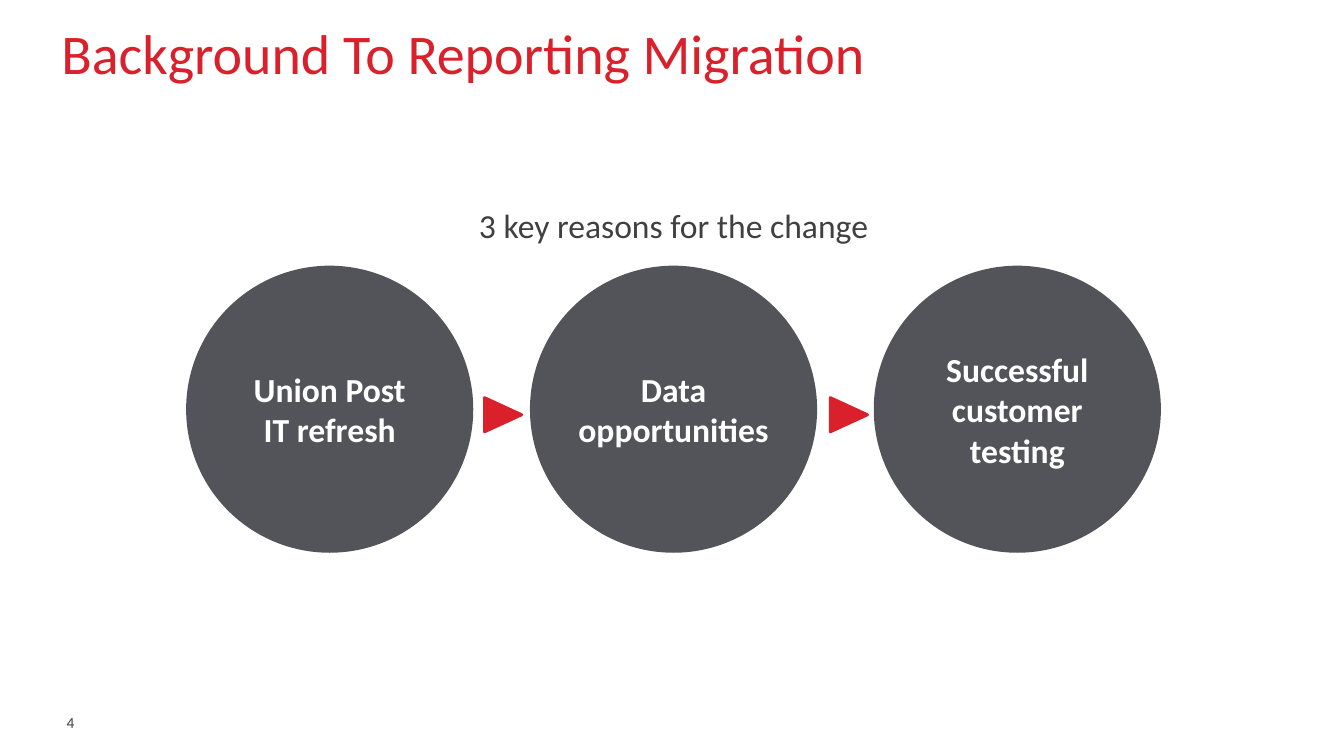
from pptx import Presentation
from pptx.dml.color import RGBColor
from pptx.enum.shapes import MSO_SHAPE as Shape
from pptx.enum.text import MSO_ANCHOR as Anchor, MSO_AUTO_SIZE as AutoSize, PP_ALIGN as Align
from pptx.oxml.xmlchemy import OxmlElement
from pptx.util import Inches, Pt

TITLE = "Background To Reporting Migration"
LEAD = "3 key reasons for the change"
REASONS = ["Union Post IT refresh", "Data opportunities", "Successful customer testing"]
PAGE = "4"

COLORS = {"red": "DA202A", "grey": "53535A", "text": "404040", "white": "FFFFFF"}
FONT = "Calibri"

# Inches
WIDTH, HEIGHT = 13.33, 7.5
CIRCLE, PITCH = 2.82, 3.41
FIRST_LEFT, CIRCLE_TOP = 1.86, 2.65
ARROW_W, ARROW_H = 0.34, 0.37
ARROW_LEFT, ARROW_TOP, ARROW_PITCH = 4.82, 3.93, 3.43


def color(name):
    return RGBColor.from_string(COLORS[name])


def place(sp, left, top, width, height):
    sp.left, sp.top, sp.width, sp.height = map(Inches, (left, top, width, height))


def write(sp, text, size, ink, align=Align.LEFT, anchor=Anchor.TOP, margins=(0, 0), bold=False):
    """Fill a shape with one formatted paragraph; margins are side and top/bottom."""
    tf = sp.text_frame
    tf.text = text
    tf.word_wrap = True
    tf.auto_size = AutoSize.NONE
    tf.vertical_anchor = anchor
    tf.margin_left = tf.margin_right = Inches(margins[0])
    tf.margin_top = tf.margin_bottom = Inches(margins[1])
    p = tf.paragraphs[0]
    p.alignment = align
    p.space_before = Pt(0)
    font = p.runs[0].font
    font.name, font.size, font.bold = FONT, Pt(size), bold
    font.color.rgb = color(ink)
    return p


def add_solid(s, kind, box, paint):
    sp = s.shapes.add_shape(kind, *map(Inches, box))
    sp.shadow.inherit = False
    sp.fill.solid()
    sp.fill.fore_color.rgb = color(paint)
    sp.line.color.rgb = color(paint)
    sp.line.width = Pt(2)
    return sp


def main():
    prs = Presentation()
    prs.slide_width, prs.slide_height = Inches(WIDTH), Inches(HEIGHT)
    s = prs.slides.add_slide(prs.slide_layouts[1])

    title, body = s.shapes.title, s.placeholders[1]
    place(title, 0.61, 0.31, 12.11, 1.1)
    write(title, TITLE, 40, "red").line_spacing = 0.8

    place(body, 0.47, 2.03, 12.42, 5.4)
    p = write(body, LEAD, 24, "text", Align.CENTER)
    pPr = p._p.get_or_add_pPr()
    pPr.set("marL", "0")
    pPr.set("indent", "0")
    pPr.append(OxmlElement("a:buNone"))

    number = s.shapes.add_textbox(*map(Inches, (0.66, 7.12, 0.32, 0.15)))
    write(number, PAGE, 11, "text").line_spacing = Pt(10)

    for i, reason in enumerate(REASONS):
        box = (FIRST_LEFT + i * PITCH, CIRCLE_TOP, CIRCLE, CIRCLE)
        circle = add_solid(s, Shape.OVAL, box, "grey")
        side = 0.04 if i == 1 else 0.1
        write(circle, reason, 24, "white", Align.CENTER, Anchor.MIDDLE, (side, 0.05), True)

    for i in range(len(REASONS) - 1):
        box = (ARROW_LEFT + i * ARROW_PITCH, ARROW_TOP, ARROW_W, ARROW_H)
        add_solid(s, Shape.ISOSCELES_TRIANGLE, box, "red").rotation = 90

    prs.save("out.pptx")


if __name__ == "__main__":
    main()
